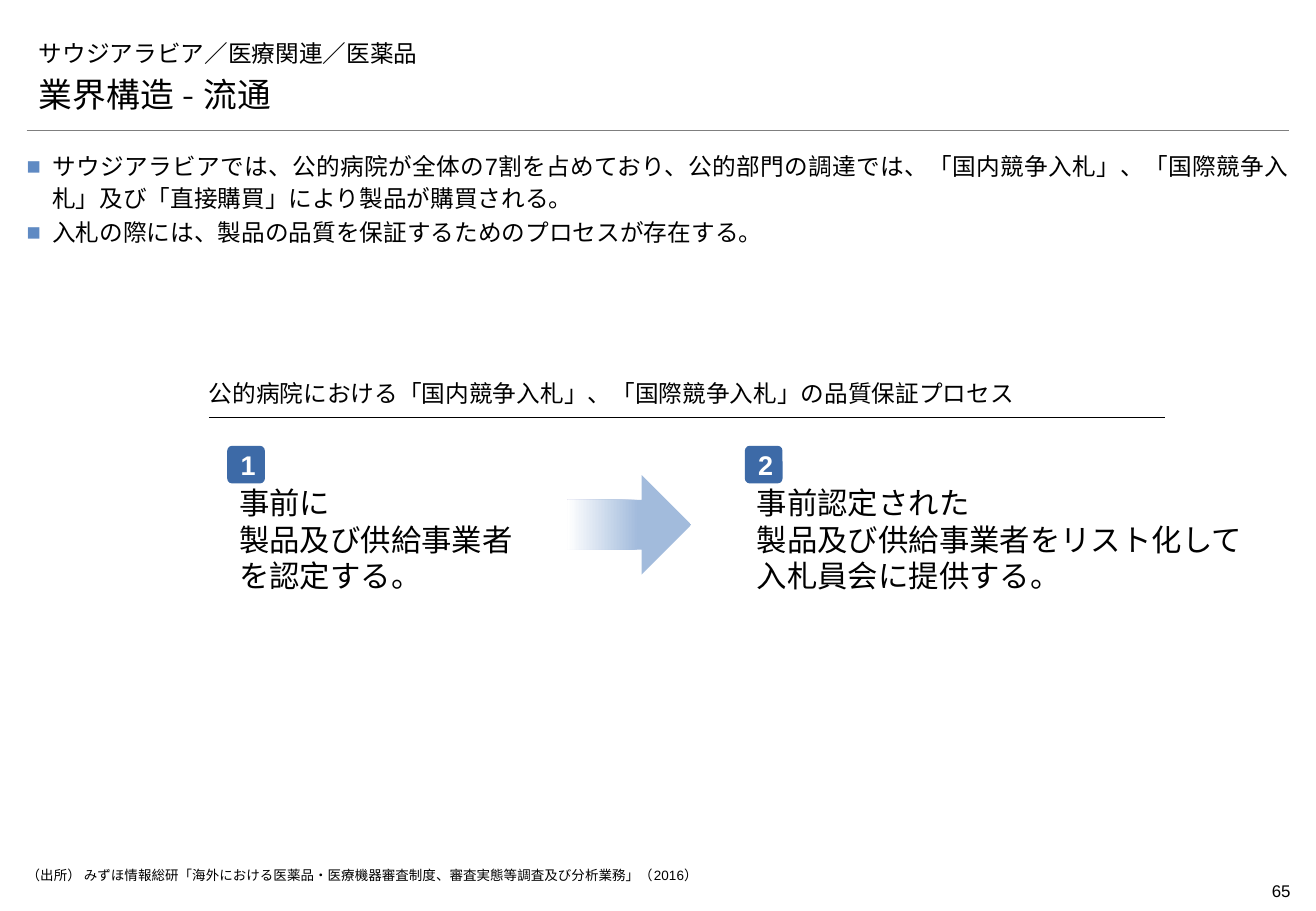
import pptx
import pptx.util
import pptx.dml.color
import pptx.enum.shapes
import pptx.enum.text
import pptx.oxml
import pptx.oxml.ns
from lxml import etree

BLACK = pptx.dml.color.RGBColor(0x00, 0x00, 0x00)
WHITE = pptx.dml.color.RGBColor(0xFF, 0xFF, 0xFF)
GREY = pptx.dml.color.RGBColor(0x7F, 0x7F, 0x7F)
BADGE_BLUE = pptx.dml.color.RGBColor(0x3D, 0x6A, 0xA7)
BULLET_BLUE = pptx.dml.color.RGBColor(0x5F, 0x8A, 0xC3)
ARROW_BLUE = pptx.dml.color.RGBColor(0xA2, 0xBB, 0xDC)
HEADING_FONT = "Montserrat"
BODY_FONT = "Arial"
JAPANESE_FONT = "Noto Sans CJK JP"
SHAPES = pptx.enum.shapes.MSO_SHAPE
ALIGN = pptx.enum.text.PP_ALIGN
ANCHOR = pptx.enum.text.MSO_ANCHOR
PX = 9144


def px(*lengths):
    return [pptx.util.Emu(length * PX) for length in lengths]


class SlideBuilder:
    def __init__(self, slide):
        self.slide = slide

    def style(self, paragraph, size, font_name, color=BLACK, bold=False):
        font = paragraph.font
        font.size = pptx.util.Pt(size)
        font.bold = bold
        font.color.rgb = color
        font.name = font_name
        properties = paragraph._p.pPr.find(pptx.oxml.ns.qn("a:defRPr"))
        etree.SubElement(properties, pptx.oxml.ns.qn("a:ea"), typeface=JAPANESE_FONT)

    def bullet(self, paragraph):
        properties = paragraph._p.get_or_add_pPr()
        properties.set("marL", str(21 * PX))
        properties.set("indent", str(-21 * PX))
        color = etree.SubElement(properties, pptx.oxml.ns.qn("a:buClr"))
        etree.SubElement(color, pptx.oxml.ns.qn("a:srgbClr"), val=str(BULLET_BLUE))
        etree.SubElement(properties, pptx.oxml.ns.qn("a:buFont"), typeface=BODY_FONT)
        etree.SubElement(properties, pptx.oxml.ns.qn("a:buChar"), char="■")

    def text(self, box, lines, size, font_name, insets=(10, 5, 10, 5), anchor=ANCHOR.TOP,
             align=ALIGN.LEFT, grow=False, bullets=False):
        frame = self.slide.shapes.add_textbox(*px(*box)).text_frame
        frame.word_wrap = True
        frame.vertical_anchor = anchor
        if grow:
            frame.auto_size = pptx.enum.text.MSO_AUTO_SIZE.SHAPE_TO_FIT_TEXT
        (frame.margin_left, frame.margin_top,
         frame.margin_right, frame.margin_bottom) = px(*insets)
        frame.text = "\n".join(lines)
        for paragraph in frame.paragraphs:
            paragraph.alignment = align
            if bullets:
                paragraph.line_spacing = 1.1
                paragraph.space_after = pptx.util.Pt(2)
                self.bullet(paragraph)
            self.style(paragraph, size, font_name)

    def rule(self, left, right, top, color, width):
        connector = self.slide.shapes.add_connector(
            pptx.enum.shapes.MSO_CONNECTOR.STRAIGHT, *px(left, top, right, top))
        connector.line.color.rgb = color
        connector.line.width = pptx.util.Pt(width)
        etree.SubElement(connector._element.spPr, pptx.oxml.ns.qn("a:effectLst"))

    def shape(self, kind, box):
        shape = self.slide.shapes.add_shape(kind, *px(*box))
        shape.shadow.inherit = False
        shape.line.fill.background()
        return shape

    def badge(self, left, top, number):
        badge = self.shape(SHAPES.ROUNDED_RECTANGLE, (left, top, 31, 31))
        badge.adjustments[0] = 0.13
        badge.fill.solid()
        badge.fill.fore_color.rgb = BADGE_BLUE
        frame = badge.text_frame
        frame.vertical_anchor = ANCHOR.MIDDLE
        frame.text = str(number)
        paragraph = frame.paragraphs[0]
        paragraph.alignment = ALIGN.CENTER
        self.style(paragraph, 16, BODY_FONT, WHITE, bold=True)

    def arrow(self, box):
        fill = self.shape(SHAPES.RIGHT_ARROW, box).fill
        fill.gradient()
        fill.gradient_angle = 180
        for stop, position, color in zip(fill.gradient_stops, (0.43, 1), (ARROW_BLUE, WHITE)):
            stop.position = position
            stop.color.rgb = color

    def step(self, left, width, number, lines):
        self.text((left, 399, width, 90), lines, 18, JAPANESE_FONT, anchor=ANCHOR.MIDDLE)
        self.badge(left, 367, number)


def main():
    presentation = pptx.Presentation()
    presentation.slide_width, presentation.slide_height = px(1083, 750)
    builder = SlideBuilder(presentation.slides.add_slide(presentation.slide_layouts[6]))

    builder.rule(22, 1061, 107, GREY, 0.25)
    builder.text((983, 720, 79, 27), ["65"], 10, BODY_FONT, insets=(0, 5, 0, 5),
                 align=ALIGN.RIGHT, grow=True)
    builder.text((22, 21, 1039, 39), ["サウジアラビア／医療関連／医薬品"], 14, HEADING_FONT,
                 anchor=ANCHOR.BOTTOM)
    builder.text((22, 60, 1040, 39), ["業界構造 - 流通"], 20, HEADING_FONT,
                 anchor=ANCHOR.BOTTOM)
    builder.text((22, 714, 1000, 16), [
        "（出所） みずほ情報総研「海外における医薬品・医療機器審査制度、審査実態等調査及び分析業務」（2016）",
    ], 8, BODY_FONT, insets=(0, 0, 0, 0))
    builder.text((22, 123, 1039, 81), [
        "サウジアラビアでは、公的病院が全体の7割を占めており、公的部門の調達では、"
        "「国内競争入札」、「国際競争入札」及び「直接購買」により製品が購買される。",
        "入札の際には、製品の品質を保証するためのプロセスが存在する。",
    ], 14, BODY_FONT, insets=(0, 0, 0, 0), align=ALIGN.JUSTIFY, grow=True, bullets=True)

    builder.rule(172, 959, 344, BLACK, 0.75)
    builder.text((172, 312, 787, 31),
                 ["公的病院における「国内競争入札」、「国際競争入札」の品質保証プロセス"],
                 14, HEADING_FONT, insets=(0, 5, 0, 8), anchor=ANCHOR.BOTTOM)
    builder.step(187, 270, 1, ["事前に", "製品及び供給事業者", "を認定する。"])
    builder.arrow((467, 391, 102, 82))
    builder.step(613, 440, 2,
                 ["事前認定された", "製品及び供給事業者をリスト化して", "入札員会に提供する。"])

    presentation.save("out.pptx")


if __name__ == "__main__":
    main()
